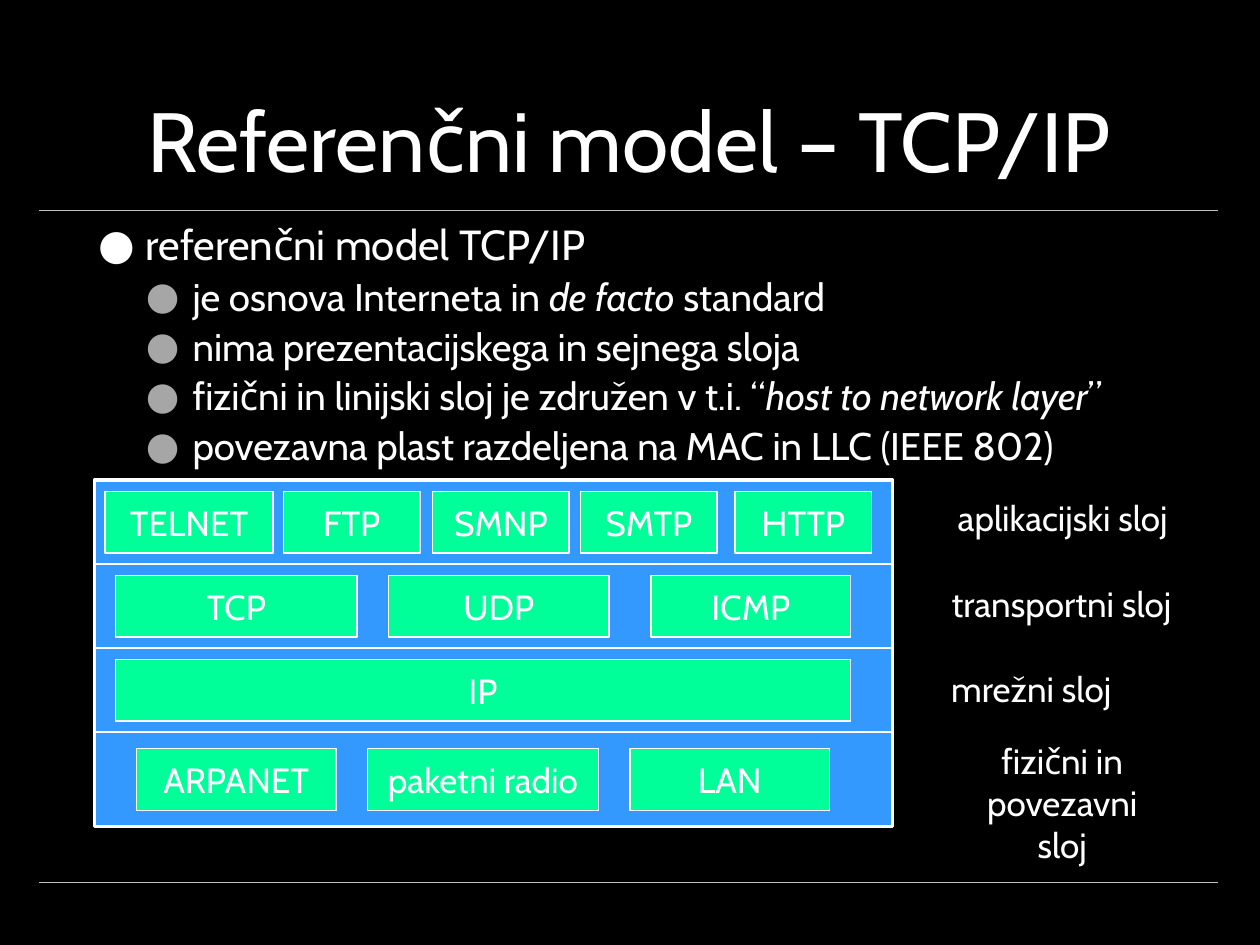
from lxml.etree import SubElement
from pptx import Presentation
from pptx.dml.color import RGBColor
from pptx.enum.shapes import MSO_CONNECTOR, MSO_SHAPE
from pptx.enum.text import MSO_ANCHOR, PP_ALIGN
from pptx.oxml.ns import qn
from pptx.util import Inches, Pt

BLACK = RGBColor(0, 0, 0)
WHITE = RGBColor(255, 255, 255)
RULE_GREY = RGBColor(0xBF, 0xBF, 0xBF)
BULLET_GREY = RGBColor(0xA6, 0xA6, 0xA6)
BLUE = RGBColor(0x33, 0x99, 0xFF)
GREEN = RGBColor(0x00, 0xFF, 0x99)
FONT = "Cabin"

# The diagram stands on a square grid of 1/12 inch
UNIT = 1 / 12
BOX_H = 0.49

# (rows, [(column, columns wide, protocol), ...])
LAYERS = [
    (8, [(1, 16, "TELNET"), (18, 13, "FTP"), (32.2, 13, "SMNP"),
         (46.3, 13, "SMTP"), (61, 13, "HTTP")]),
    (8, [(2, 23, "TCP"), (28, 21, "UDP"), (53, 19, "ICMP")]),
    (8, [(2, 70, "IP")]),
    (9, [(4, 19, "ARPANET"), (26, 22, "paketni radio"), (51, 19, "LAN")]),
]

# (left, top, width, height, paragraphs, wrap)
LABELS = [
    (7.42, 3.89, 2.03, 0.38, ["aplikacijski sloj"], False),
    (7.42, 4.57, 2.01, 0.38, ["transportni sloj"], False),
    (7.42, 5.25, 1.53, 0.38, ["mrežni sloj"], False),
    (7.24, 5.82, 2.38, 0.77, ["fizični in povezavni", "sloj"], True),
]

# (level, [(text, italic), ...])
BULLETS = [
    (0, [("referenčni model TCP/IP", False)]),
    (1, [("je osnova Interneta in ", False), ("de facto", True),
         (" standard", False)]),
    (1, [("nima prezentacijskega in sejnega sloja", False)]),
    (1, [("fizični in linijski sloj je združen v t.i. “", False),
         ("host to network layer", True), ("”", False)]),
    (1, [("povezavna plast razdeljena na MAC in LLC (IEEE 802)", False)]),
]
# size, space before, left margin, hanging indent, bullet colour
LEVELS = [(24, 20, 0.38, -0.38, WHITE), (22, 6, 0.75, -0.37, BULLET_GREY)]


def inches(*lengths):
    return [Inches(v) for v in lengths]


def add_run(p, text, size, italic=False):
    r = p.add_run()
    r.text = text
    formats = {"name": FONT, "size": Pt(size), "italic": italic}
    for name, value in formats.items():
        setattr(r.font, name, value)
    r.font.color.rgb = WHITE


def add_centred(p, text, size):
    p.alignment = PP_ALIGN.CENTER
    add_run(p, text, size)


def add_rule(s, x, y, w, color, weight):
    sp = s.shapes.add_connector(MSO_CONNECTOR.STRAIGHT,
                                *inches(x, y, x + w, y))
    sp.line.color.rgb = color
    sp.line.width = Pt(weight)
    SubElement(sp._element.spPr, qn("a:effectLst"))


def add_box(s, box, fill, weight, text=""):
    sp = s.shapes.add_shape(MSO_SHAPE.RECTANGLE, *inches(*box))
    sp.shadow.inherit = False
    sp.fill.solid()
    sp.fill.fore_color.rgb = fill
    sp.line.color.rgb = WHITE
    sp.line.width = Pt(weight)
    if text:
        tf = sp.text_frame
        tf.word_wrap = False
        tf.vertical_anchor = MSO_ANCHOR.MIDDLE
        add_centred(tf.paragraphs[0], text, 20)


def set_bullet(p, margin, indent, color):
    pPr = p._p.get_or_add_pPr()
    pPr.set("marL", str(Inches(margin)))
    pPr.set("indent", str(Inches(indent)))
    clr = SubElement(pPr, qn("a:buClr"))
    SubElement(clr, qn("a:srgbClr"), val=str(color))
    SubElement(pPr, qn("a:buFont"), typeface=FONT)
    SubElement(pPr, qn("a:buChar"), char="●")


def fill_title(s, box):
    sp = s.shapes.title
    sp.left, sp.top, sp.width, sp.height = inches(*box)
    tf = sp.text_frame
    tf.word_wrap = True
    tf.vertical_anchor = MSO_ANCHOR.BOTTOM
    add_centred(tf.paragraphs[0], "Referenčni model – TCP/IP", 48)


def add_bullets(s, box):
    tf = s.shapes.add_textbox(*inches(*box)).text_frame
    tf.word_wrap = True
    for i, (level, runs) in enumerate(BULLETS):
        p = tf.add_paragraph() if i else tf.paragraphs[0]
        size, before, margin, indent, color = LEVELS[level]
        formats = {"level": level, "line_spacing": 0.85,
                   "space_before": Pt(before)}
        for name, value in formats.items():
            setattr(p, name, value)
        set_bullet(p, margin, indent, color)
        for text, italic in runs:
            add_run(p, text, size, italic)


def add_stack(s, box):
    x, y, w, h = box
    add_box(s, box, BLUE, 2.25)
    for i, (rows, protocols) in enumerate(LAYERS):
        row_h = rows * UNIT
        if i:
            add_rule(s, x, y, w, WHITE, 0.75)
        for col, cols, name in protocols:
            add_box(s, (x + col * UNIT, y + (row_h - BOX_H) / 2,
                        cols * UNIT, BOX_H), GREEN, 0.75, name)
        y += row_h


def add_labels(s):
    for x, y, w, h, lines, wrap in LABELS:
        tf = s.shapes.add_textbox(*inches(x, y, w, h)).text_frame
        tf.word_wrap = wrap
        for i, line in enumerate(lines):
            p = tf.add_paragraph() if i else tf.paragraphs[0]
            add_centred(p, line, 20)


def main():
    prs = Presentation()
    prs.slide_width, prs.slide_height = inches(10, 7.5)
    s = prs.slides.add_slide(prs.slide_layouts[5])
    s.background.fill.solid()
    s.background.fill.fore_color.rgb = BLACK

    # Rules above and below the content
    for y in (1.67, 7):
        add_rule(s, 0.31, y, 9.36, RULE_GREY, 0.25)

    # Text
    fill_title(s, (0.7, 0.12, 8.59, 1.43))
    add_bullets(s, (0.68, 1.75, 8.62, 2.18))

    # Protocol stack with the names of its layers
    add_stack(s, (0.75, 3.81, 76 * UNIT, 33 * UNIT))
    add_labels(s)

    prs.save("out.pptx")


if __name__ == "__main__":
    main()
